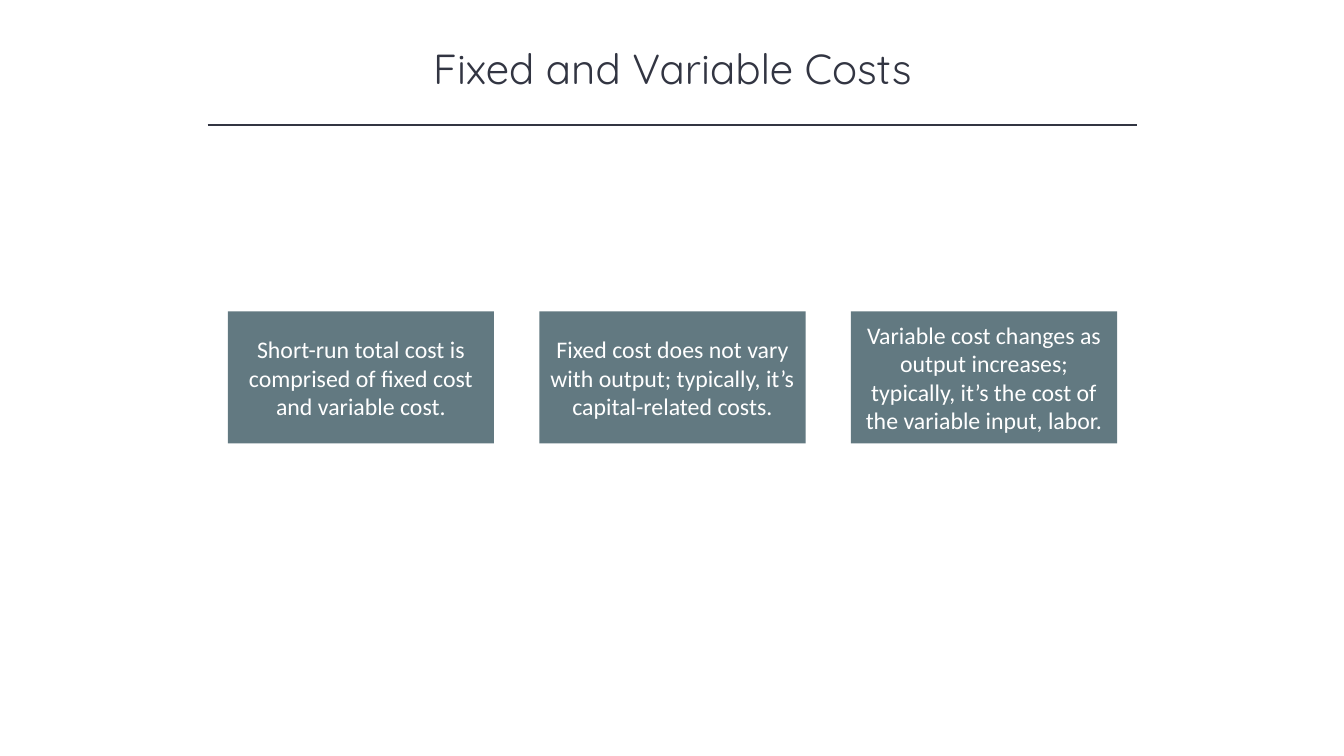
from lxml.etree import SubElement
from pptx import Presentation
from pptx.dml.color import RGBColor
from pptx.enum.shapes import MSO_CONNECTOR, MSO_SHAPE
from pptx.enum.text import MSO_ANCHOR, PP_ALIGN
from pptx.oxml.ns import qn
from pptx.util import Inches, Pt

COLORS = {"ink": "323542", "card": "627981", "white": "FFFFFF"}


def write_text(sp, text, *, size, font, color, anchor):
    tf = sp.text_frame
    tf.word_wrap = True
    tf.vertical_anchor = anchor
    p = tf.paragraphs[0]
    p.alignment = PP_ALIGN.CENTER
    r = p.add_run()
    r.text = text
    r.font.size = Pt(size)
    r.font.name = font
    r.font.color.rgb = RGBColor.from_string(COLORS[color])


prs = Presentation()
prs.slide_width = Inches(13.33)
prs.slide_height = Inches(7.5)
s = prs.slides.add_slide(prs.slide_layouts[6])

# Title and rule
title = s.shapes.add_textbox(Inches(1.67), Inches(0.37), Inches(10), Inches(0.61))
write_text(title, "Fixed and Variable Costs", size=30, font="Quicksand",
           color="ink", anchor=MSO_ANCHOR.TOP)

rule = s.shapes.add_connector(MSO_CONNECTOR.STRAIGHT, Inches(2.06), Inches(1.24),
                              Inches(11.28), Inches(1.24))
rule.line.color.rgb = RGBColor.from_string(COLORS["ink"])
rule.line.width = Pt(1)
SubElement(rule._element.spPr, qn("a:effectLst"))

# Row of three cost cards
CARD_LEFT, CARD_TOP, CARD_STEP = 2.26, 3.09, 3.09
CARD_WIDTH, CARD_HEIGHT = 2.64, 1.31
cards = [
    "Short-run total cost is comprised of fixed cost and variable cost.",
    "Fixed cost does not vary with output; typically, it’s capital-related costs.",
    "Variable cost changes as output increases; typically, it’s the cost of "
    "the variable input, labor.",
]
for i, text in enumerate(cards):
    card = s.shapes.add_shape(
        MSO_SHAPE.RECTANGLE, Inches(CARD_LEFT + i * CARD_STEP), Inches(CARD_TOP),
        Inches(CARD_WIDTH), Inches(CARD_HEIGHT))
    card.shadow.inherit = False
    card.fill.solid()
    card.fill.fore_color.rgb = RGBColor.from_string(COLORS["card"])
    card.line.fill.background()
    write_text(card, text, size=17, font="Calibri", color="white",
               anchor=MSO_ANCHOR.MIDDLE)

prs.save("out.pptx")
